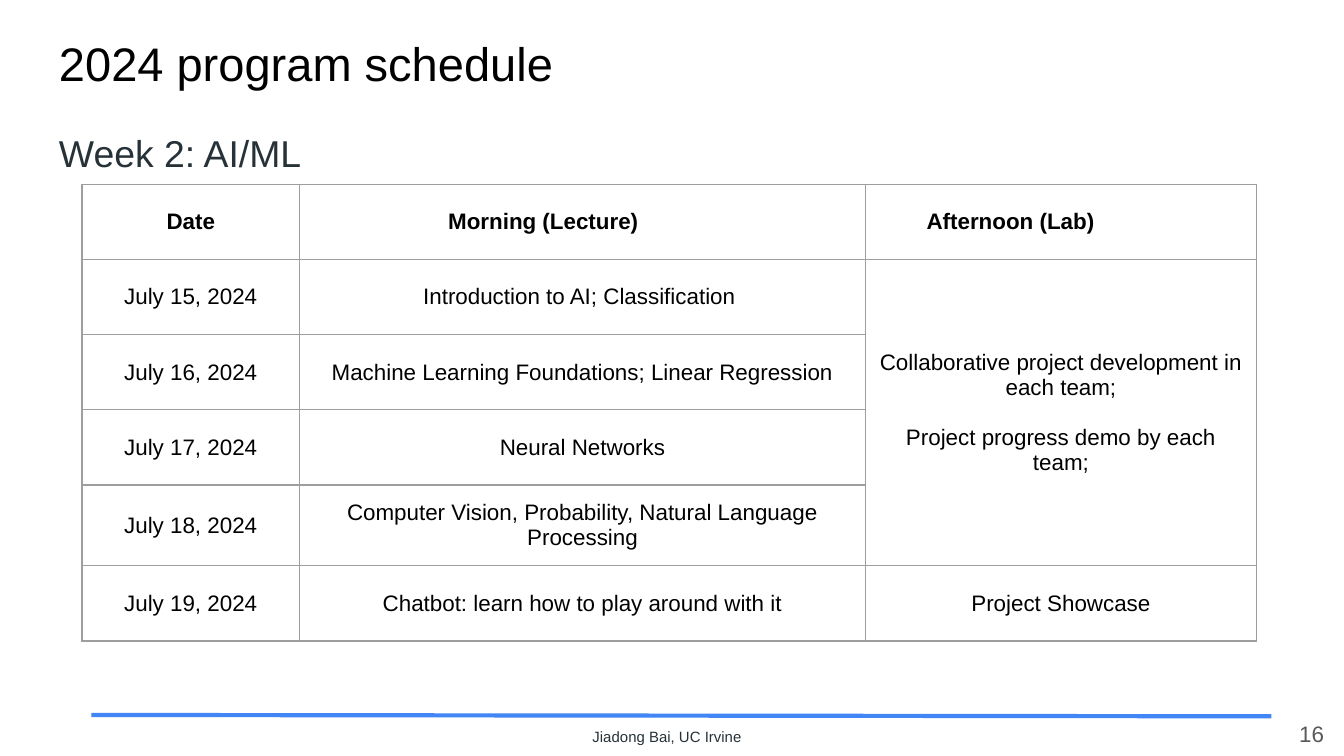
from lxml import etree
from pptx import Presentation
from pptx import util as u
from pptx.dml.color import RGBColor
from pptx.enum import shapes, text
from pptx.oxml import parse_xml
from pptx.oxml.ns import nsdecls, qn

INK, SLATE, GRAY = "000000", "263238", "595959"
BLUE, BORDER, WHITE = "4285F4", "9E9E9E", "FFFFFF"
LEFT, CENTER, RIGHT = text.PP_ALIGN.LEFT, text.PP_ALIGN.CENTER, text.PP_ALIGN.RIGHT
TOP, MIDDLE = text.MSO_ANCHOR.TOP, text.MSO_ANCHOR.MIDDLE

HEADERS = ["Date", "Morning (Lecture)\t", "Afternoon (Lab)\t"]
LECTURES = [
    ("July 15, 2024", "Introduction to AI; Classification "),
    ("July 16, 2024", "Machine Learning Foundations; Linear Regression"),
    ("July 17, 2024", "Neural Networks"),
    ("July 18, 2024", "Computer Vision, Probability, Natural Language Processing"),
    ("July 19, 2024", "Chatbot: learn how to play around with it"),
]
LAB_WORK = ["Collaborative project development in each team;",
            "Project progress demo by each team;"]
SHOWCASE = "Project Showcase"


def color(value):
    return RGBColor.from_string(value)


def write(frame, *lines, size=12, ink=INK, bold=False, align=LEFT, gap=0):
    """Write each line as a paragraph, with gap points between them."""
    frame.word_wrap = True
    for i, line in enumerate(lines):
        para = frame.add_paragraph() if i else frame.paragraphs[0]
        para.alignment = align
        para._p.get_or_add_pPr().set("defTabSz", str(u.Inches(1)))
        if i:
            para.space_before = u.Pt(gap)
        span = para.add_run()
        span.text = line
        span.font.name = "Arial"
        span.font.size = u.Pt(size)
        span.font.bold = bold
        span.font.color.rgb = color(ink)


def add_text(page, box, line, anchor=TOP, **style):
    frame = page.shapes.add_textbox(*map(u.Inches, box)).text_frame
    frame.margin_left = frame.margin_right = u.Inches(0.1)
    frame.margin_top = frame.margin_bottom = u.Inches(0.1)
    frame.vertical_anchor = anchor
    write(frame, line, **style)


def style_cell(cell):
    cell.vertical_anchor = MIDDLE
    cell.margin_left = cell.margin_right = u.Inches(0.1)
    cell.margin_top = cell.margin_bottom = u.Inches(0.1)
    props = cell._tc.get_or_add_tcPr()
    for i, side in enumerate(("lnL", "lnR", "lnT", "lnB")):
        props.insert(i, parse_xml(
            f'<a:{side} {nsdecls("a")} w="{u.Pt(0.75)}"><a:solidFill>'
            f'<a:srgbClr val="{BORDER}"/></a:solidFill></a:{side}>'))
    cell.fill.solid()
    cell.fill.fore_color.rgb = color(WHITE)


def add_heading(page, left, top):
    add_text(page, (left, top, 9.32, 0.63), "2024 program schedule", size=25.2)
    add_text(page, (left, top + 0.71, 6.74, 0.3), "Week 2: AI/ML", size=20, ink=SLATE)


def add_schedule(page, left, top, widths, row_height):
    rows = len(LECTURES) + 1
    table = page.shapes.add_table(
        rows, len(widths), u.Inches(left), u.Inches(top),
        u.Inches(sum(widths)), u.Inches(rows * row_height)).table
    table.first_row = table.horz_banding = False
    for column, width in zip(table.columns, widths):
        column.width = u.Inches(width)
    for row in table.rows:
        row.height = u.Inches(row_height)
    for cell in table.iter_cells():
        style_cell(cell)

    # Header row, then one date and lecture per row
    for c, header in enumerate(HEADERS):
        write(table.cell(0, c).text_frame, header, bold=True, align=CENTER)
    for r, lecture in enumerate(LECTURES, 1):
        for c, entry in enumerate(lecture):
            write(table.cell(r, c).text_frame, entry, align=CENTER)

    # Labs: one shared cell up to the last day
    lab = table.cell(1, 2)
    lab.merge(table.cell(rows - 2, 2))
    write(lab.text_frame, *LAB_WORK, align=CENTER, gap=13.4)
    write(table.cell(rows - 1, 2).text_frame, SHOWCASE, align=CENTER)


def add_footer(page, left, top, width):
    rule = page.shapes.add_connector(
        shapes.MSO_CONNECTOR.STRAIGHT, u.Inches(left), u.Inches(top),
        u.Inches(left + width), u.Inches(top + 0.01))
    rule.line.color.rgb = color(BLUE)
    rule.line.width = u.Pt(2.25)
    etree.SubElement(rule._element.spPr, qn("a:effectLst"))
    add_text(page, (left + 3.63, top + 0.03, 1.38, 0.34), "Jiadong Bai, UC Irvine",
             size=8, ink=SLATE)
    add_text(page, (left + 8.67, top - 0.08, 0.6, 0.43), "16", anchor=MIDDLE,
             ink=GRAY, align=RIGHT)


def main():
    deck = Presentation()
    # Widescreen, 16 to 9
    deck.slide_width, deck.slide_height = u.Inches(10), u.Inches(10 * 9 / 16)
    page = deck.slides.add_slide(deck.slide_layouts[6])
    add_footer(page, 0.68, 5.32, 8.78)
    add_heading(page, 0.34, 0.16)
    add_schedule(page, 0.61, 1.37, (1.62, 4.21, 2.91), 0.56)
    deck.save("out.pptx")


if __name__ == "__main__":
    main()
